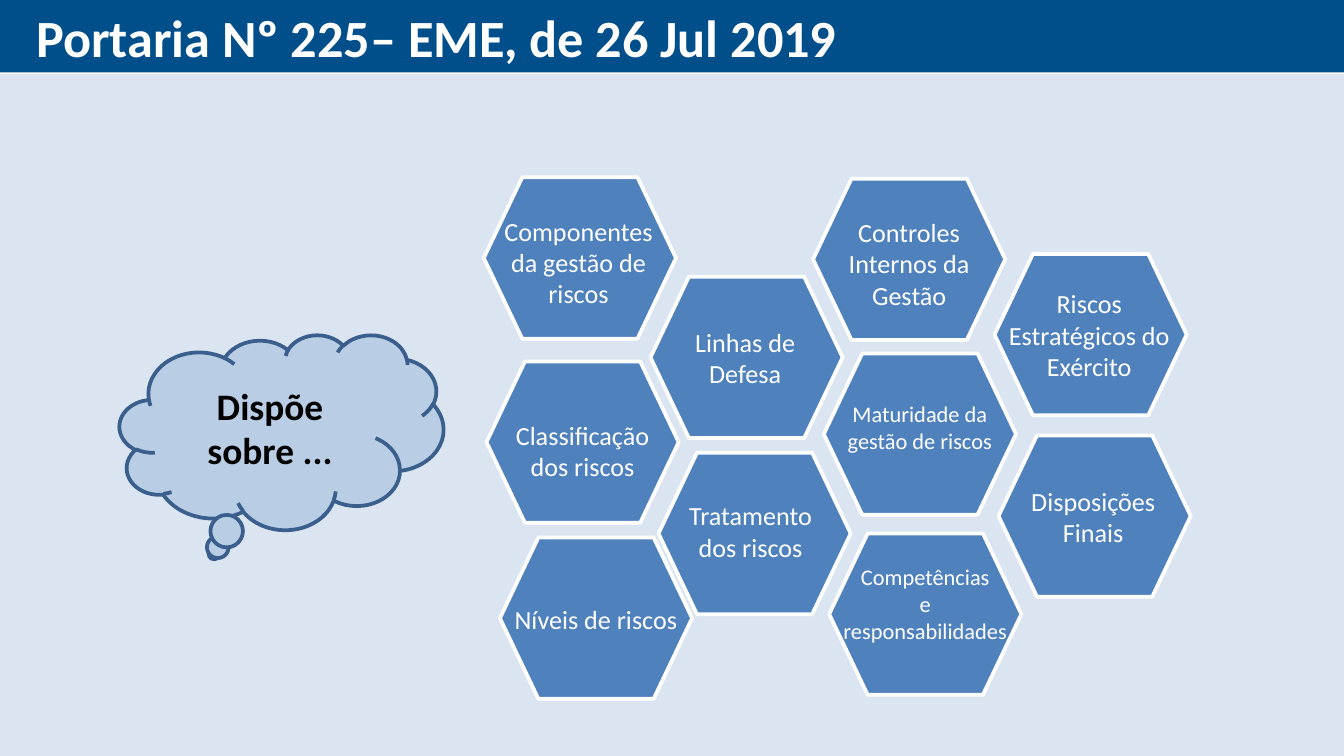
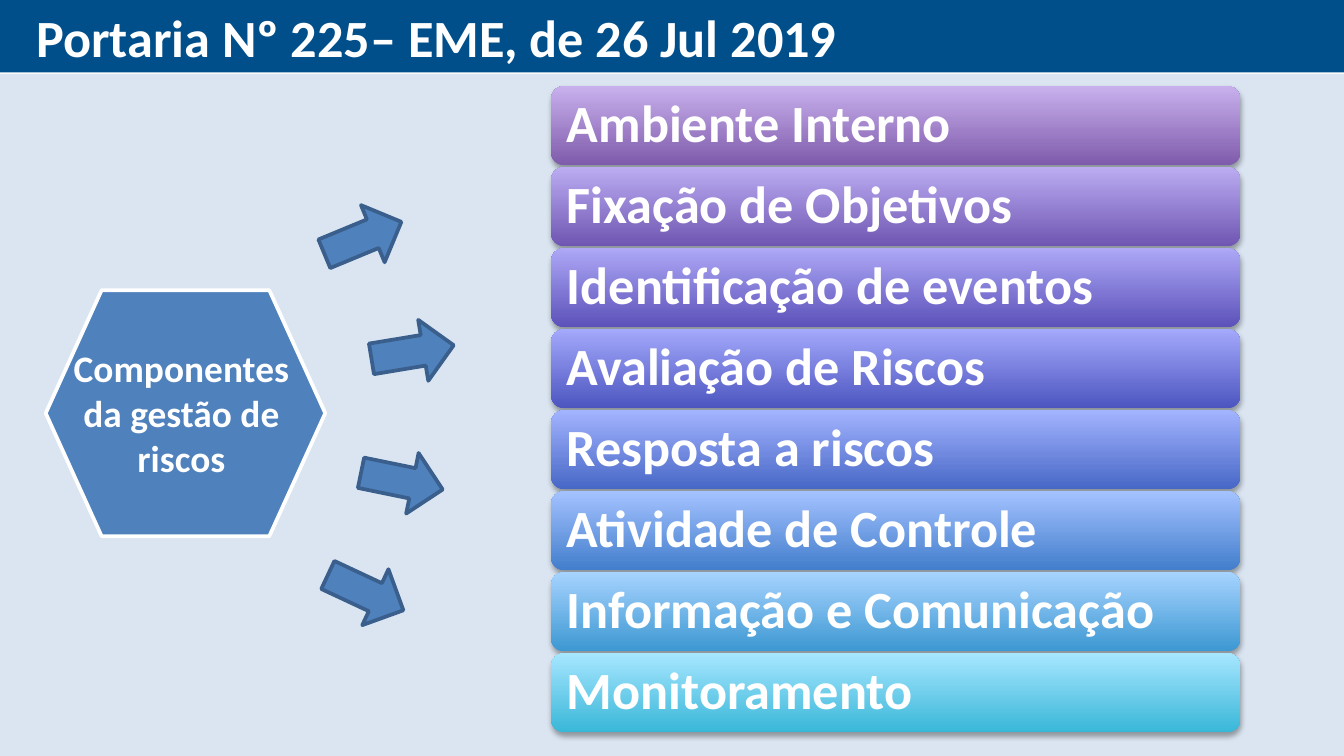
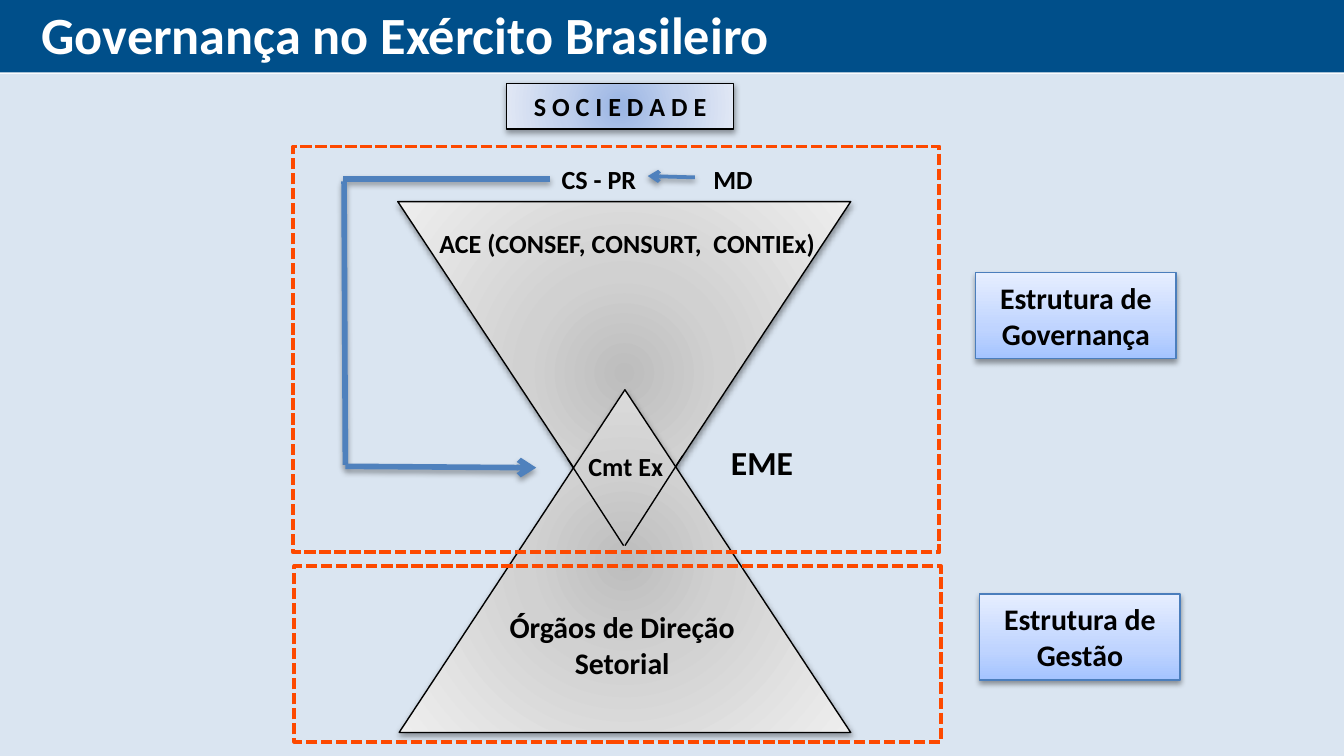
from lxml import etree
from pptx import Presentation
from pptx.dml.color import RGBColor
from pptx.enum.dml import MSO_LINE
from pptx.enum.shapes import MSO_CONNECTOR as LINK, MSO_SHAPE as SHAPE
from pptx.enum.text import MSO_ANCHOR as ANCHOR, PP_ALIGN as ALIGN
from pptx.oxml import parse_xml
from pptx.util import Inches, Pt

A = "http://schemas.openxmlformats.org/drawingml/2006/main"
COLORS = {
    "band": "004F8A", "page": "DAE5F1", "white": "FFFFFF", "black": "000000",
    "blue": "4F81BD", "edge": "3A5F8C", "cloud": "B9CDE5", "frame": "FD4900",
    "label_edge": "4B7EBC",
}
SOCIETY = [(0, "9AB5E4"), (50, "C2D1ED"), (100, "E1E8F5")]
GRAY = [(0, "BDBDBD"), (35, "D1D1D1"), (100, "EEEEEE")]
LABEL = [(0, "A4C4FF"), (35, "BFD4FF"), (100, "E6EEFF")]
RISE = '<a:lin ang="16200000" scaled="0"/>'
RADIAL = '<a:path path="circle"><a:fillToRect l="50000" t="50000" r="50000" b="50000"/></a:path>'


def paint(shape, fill=None, line=None, width=2, stops=None, blend=RISE,
          shadow=None, arrow=False):
    props = shape.element.spPr
    if stops:
        marks = "".join(f'<a:gs pos="{pos * 1000}"><a:srgbClr val="{color}"/></a:gs>'
                        for pos, color in stops)
        props.insert(2, parse_xml(f'<a:gradFill xmlns:a="{A}" rotWithShape="1">'
                                  f'<a:gsLst>{marks}</a:gsLst>{blend}</a:gradFill>'))
    elif fill:
        shape.fill.solid()
        shape.fill.fore_color.rgb = RGBColor.from_string(COLORS[fill])
    elif hasattr(shape, "fill"):
        shape.fill.background()
    if line:
        shape.line.color.rgb = RGBColor.from_string(COLORS[line])
        shape.line.width = Pt(width)
    else:
        shape.line.fill.background()
    if arrow:
        etree.SubElement(props.find(f"{{{A}}}ln"), f"{{{A}}}tailEnd", type="arrow")
    effects = etree.SubElement(props, f"{{{A}}}effectLst")
    if shadow:
        opacity, distance = shadow
        cast = etree.SubElement(effects, f"{{{A}}}outerShdw", blurRad=str(Pt(3.1)),
                                dist=str(Pt(distance)), dir="5400000", rotWithShape="0")
        black = etree.SubElement(cast, f"{{{A}}}srgbClr", val=COLORS["black"])
        etree.SubElement(black, f"{{{A}}}alpha", val=str(opacity * 1000))
    return shape


def write(shape, text, size=14, color="black", bold=True, align=ALIGN.CENTER,
          anchor=ANCHOR.TOP, inset=(0.1, 0.05), spacing=None, tab=None):
    frame = shape.text_frame
    frame.word_wrap = True
    frame.vertical_anchor = anchor
    frame.margin_left = frame.margin_right = Inches(inset[0])
    frame.margin_top = frame.margin_bottom = Inches(inset[1])
    frame.text = text
    for paragraph in frame.paragraphs:
        paragraph.alignment = align
        paragraph.line_spacing = spacing
        if tab:
            tabs = etree.SubElement(paragraph._p.get_or_add_pPr(), f"{{{A}}}tabLst")
            etree.SubElement(tabs, f"{{{A}}}tab", pos=str(Inches(tab)), algn="l")
        paragraph.font.name = "Calibri"
        paragraph.font.size = Pt(size)
        paragraph.font.bold = bold
        paragraph.font.color.rgb = RGBColor.from_string(COLORS[color])


deck = Presentation()
deck.slide_width = Inches(10)
deck.slide_height = deck.slide_width * 9 // 16
blank = deck.slide_layouts[6]

ordinance = "Portaria Nº 225– EME, de 26 Jul 2019"
titles = [(ordinance, -0.09, 0, 8.38), (ordinance, -0.09, 0, 8.38),
          ("Governança no Exército Brasileiro", -0.05, -0.02, 8.99)]
slides = []
for title, left, top, width in titles:
    slide = deck.slides.add_slide(blank)
    heading = slide.shapes.add_textbox(Inches(left), Inches(top), Inches(width), Inches(0.55))
    write(heading, title, size=28, color="white", align=ALIGN.LEFT, inset=(0.36, 0.04))
    slides.append(slide.shapes)
topics, components, governance = slides

for top, height, color in [(0, 0.54, "band"), (0.55, 5.08, "page")]:
    band = topics.add_shape(SHAPE.RECTANGLE, 0, Inches(top), Inches(10), Inches(height))
    blank.shapes.element.append(paint(band, color).element)

cloud = topics.add_shape(SHAPE.CLOUD_CALLOUT, Inches(0.89), Inches(2.49), Inches(2.41), Inches(1.45))
write(paint(cloud, "cloud", "edge"), "Dispõe sobre ...", size=20, anchor=ANCHOR.MIDDLE)

hexagons = [
    (3.6, 1.32, "Componentes da gestão de riscos", 3.59, 1.55, 0.81, 14),
    (3.62, 2.69, "Classificação dos riscos", 3.62, 3.07, 0.57, 14),
    (3.72, 4, "Níveis de riscos", 3.72, 4.44, 0.34, 14),
    (4.9, 3.37, "Tratamento dos riscos", 4.87, 3.67, 0.57, 14),
    (4.84, 2.06, "Linhas de Defesa", 4.83, 2.38, 0.57, 14),
    (6.05, 1.33, "Controles Internos da Gestão", 6.05, 1.56, 0.81, 14),
    (6.13, 2.63, "Maturidade da gestão de riscos", 6.13, 2.93, 0.5, 12),
    (6.17, 3.97, "Competências\ne\nresponsabilidades", 6.17, 4.14, 0.71, 12),
    (7.4, 1.89, "Riscos Estratégicos do Exército", 7.39, 2.09, 0.81, 14),
    (7.43, 3.24, "Disposições Finais", 7.42, 3.56, 0.57, 14),
]
for left, top, topic, text_left, text_top, text_height, size in hexagons:
    hexagon = topics.add_shape(SHAPE.FLOWCHART_PREPARATION, Inches(left), Inches(top),
                               Inches(1.43), Inches(1.2))
    paint(hexagon, "blue", "white")
    caption = topics.add_textbox(Inches(text_left), Inches(text_top), Inches(1.43),
                                 Inches(text_height))
    write(caption, topic, size=size, color="white", bold=False)

core = components.add_shape(SHAPE.FLOWCHART_PREPARATION, Inches(0.34), Inches(2.16),
                            Inches(2.08), Inches(1.83))
paint(core, "blue", "white")
core_caption = components.add_textbox(Inches(0.31), Inches(2.52), Inches(2.08), Inches(1.11))
write(core_caption, "Componentes da gestão de riscos", size=20, color="white")

steps = [
    ("Ambiente Interno", "7F5BAB", "C8B0ED"),
    ("Fixação de Objetivos", "6F56B2", "BBACF2"),
    ("Identificação de eventos", "5B51B9", "AEA8F7"),
    ("Avaliação de Riscos", "4C55BF", "A4A9FC"),
    ("Resposta a riscos", "4767C6", "A3B4FF"),
    ("Atividade de Controle", "427ECC", "A4C2FF"),
    ("Informação e Comunicação", "3D98D2", "A6D3FF"),
    ("Monitoramento", "39B7D8", "A7E6FF"),
]
pitch = (4.86 - 0.64) / (len(steps) - 1)
for row, (step, dark, light) in enumerate(steps):
    bar = components.add_shape(SHAPE.ROUNDED_RECTANGLE, Inches(4.1), Inches(0.64 + row * pitch),
                               Inches(5.13), Inches(0.59))
    paint(bar, stops=[(0, dark), (100, light)], shadow=(35, 1.8))
    write(bar, step, size=28, color="white", align=ALIGN.LEFT, anchor=ANCHOR.MIDDLE,
          inset=(0.09, 0.09), spacing=0.9)

for left, top, angle in [(2.76, 2.39, 350.6), (2.41, 4.18, 25.1), (2.68, 3.35, 11.6), (2.39, 1.54, 337.5)]:
    pointer = components.add_shape(SHAPE.RIGHT_ARROW, Inches(left), Inches(top),
                                   Inches(0.62), Inches(0.46))
    pointer.rotation = angle
    paint(pointer, "blue", "edge")

society = governance.add_shape(SHAPE.RECTANGLE, Inches(3.77), Inches(0.62), Inches(1.69), Inches(0.34))
paint(society, line="black", width=0.75, stops=SOCIETY, blend=RADIAL, shadow=(38, 1.6))
write(society, "S O C I E D A D E")

for left, top, width, angle in [(2.96, 1.5, 3.37, 180), (2.97, 2.9, 3.36, 0)]:
    triangle = governance.add_shape(SHAPE.ISOSCELES_TRIANGLE, Inches(left), Inches(top),
                                    Inches(width), Inches(2.55))
    triangle.rotation = angle
    paint(triangle, line="black", width=0.75, stops=GRAY, blend=RADIAL, shadow=(38, 1.6))

bodies = [
    ("ACE (CONSEF, CONSURT,  CONTIEx)", 3.17, 1.64, 3.12, 0.34, 14, ALIGN.LEFT, None),
    ("Cmt Ex", 4.28, 3.3, 0.84, 0.34, 14, ALIGN.LEFT, None),
    ("EME", 5.34, 3.24, 0.84, 0.4, 18, ALIGN.LEFT, None),
    ("CS - PR\tMD", 4.08, 1.17, 2.14, 0.34, 14, ALIGN.LEFT, 1.13),
    ("Órgãos de Direção Setorial", 3.46, 4.48, 2.34, 0.64, 16, ALIGN.CENTER, None),
]
for body, left, top, width, height, size, align, tab in bodies:
    caption = governance.add_textbox(Inches(left), Inches(top), Inches(width), Inches(height))
    write(caption, body, size=size, align=align, tab=tab)

scopes = [
    (2.18, 1.09, 3.02, "Estrutura de Governança", 7.26, 2.03),
    (2.19, 4.21, 1.31, "Estrutura de Gestão", 7.29, 4.42),
]
for left, top, height, scope, label_left, label_top in scopes:
    border = governance.add_shape(SHAPE.RECTANGLE, Inches(left), Inches(top), Inches(4.81), Inches(height))
    paint(border, line="frame")
    border.line.dash_style = MSO_LINE.SQUARE_DOT
    label = governance.add_shape(SHAPE.RECTANGLE, Inches(label_left), Inches(label_top),
                                 Inches(1.49), Inches(0.64))
    paint(label, line="label_edge", width=0.75, stops=LABEL, shadow=(38, 1.6))
    write(label, scope, size=16)

links = [
    (4.09, 1.33, 2.55, 1.33, "blue", 3, (35, 1.8), False),
    (2.56, 1.35, 2.57, 3.46, "blue", 3, (35, 1.8), False),
    (2.57, 3.47, 3.99, 3.48, "blue", 3, (35, 1.8), True),
    (5.17, 1.32, 4.82, 1.31, "blue", 2, (38, 1.6), True),
    (4.64, 4.06, 4.22, 3.41, "black", 0.75, None, False),
    (4.65, 4.06, 5.08, 3.39, "black", 0.75, None, False),
]
for x1, y1, x2, y2, color, width, shadow, arrow in links:
    link = governance.add_connector(LINK.STRAIGHT, Inches(x1), Inches(y1), Inches(x2), Inches(y2))
    paint(link, line=color, width=width, shadow=shadow, arrow=arrow)

deck.save("out.pptx")
